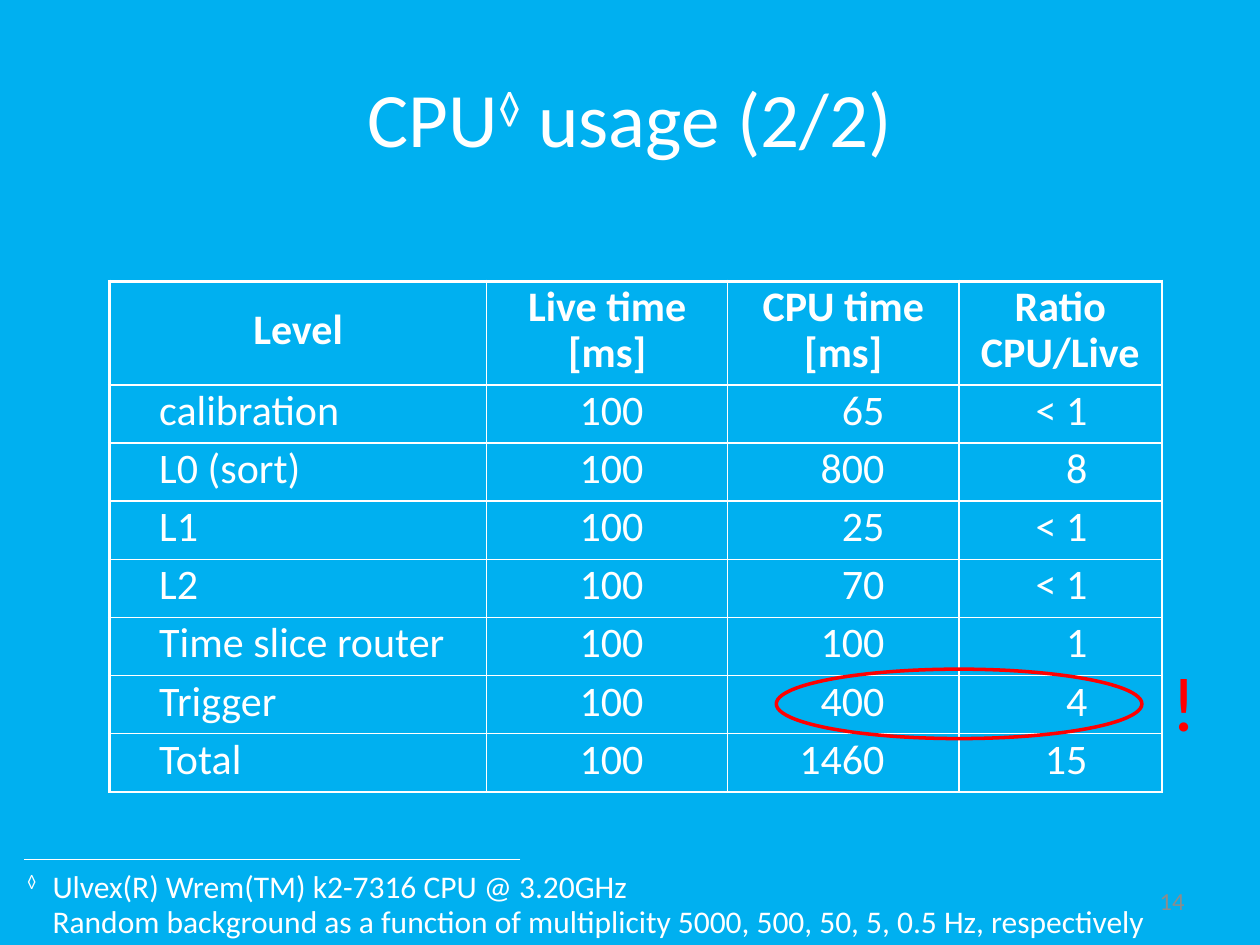
"""Build the CPU usage slide with its table, highlight and footnote."""
from dataclasses import dataclass

from lxml import etree
from pptx import Presentation
from pptx.dml.color import RGBColor
from pptx.enum.shapes import MSO_CONNECTOR, MSO_SHAPE
from pptx.enum.text import MSO_ANCHOR, PP_ALIGN
from pptx.oxml.ns import qn
from pptx.slide import Slide
from pptx.table import Table, _Cell
from pptx.text.text import TextFrame, _Paragraph
from pptx.util import Cm, Pt

LEFT, CENTER, RIGHT = PP_ALIGN.LEFT, PP_ALIGN.CENTER, PP_ALIGN.RIGHT
TOP, MIDDLE = MSO_ANCHOR.TOP, MSO_ANCHOR.MIDDLE
ELLIPSE, STRAIGHT = MSO_SHAPE.OVAL, MSO_CONNECTOR.STRAIGHT
COLORS = {"background": "00B0F0", "text": "FFFFFF", "alert": "FF0000", "number": "8C8C8C"}
FONT = "Calibri"
THIN, THICK = 1, 2.25
HEADER_HEIGHT, ROW_HEIGHT = 2.08, 1.17
FOOTNOTE_INDENT = 0.51


@dataclass(frozen=True)
class Box:
    """Hold a position and size in centimetres."""
    left: float
    top: float
    width: float
    height: float

    def lengths(self) -> tuple[Cm, Cm, Cm, Cm]:
        """Return the four values as lengths."""
        return Cm(self.left), Cm(self.top), Cm(self.width), Cm(self.height)


@dataclass(frozen=True)
class Style:
    """Describe the look of a run."""
    size: float
    color: str = "text"
    bold: bool = False


@dataclass(frozen=True)
class Column:
    """Describe a table column and its body cells."""
    heading: str
    width: float
    align: PP_ALIGN
    margin_left: float = 0.25
    margin_right: float = 0.25


COLUMNS = [
    Column("Level", 7.6, LEFT, margin_left=1.0),
    Column("Live time\n[ms]", 4.86, RIGHT, margin_right=1.7),
    Column("CPU time\n[ms]", 4.66, RIGHT, margin_right=1.5),
    Column("Ratio\nCPU/Live", 4.09, RIGHT, margin_right=1.5),
]
LEVELS = [
    ("calibration", "100", "65", "< 1"),
    ("L0 (sort)", "100", "800", "8"),
    ("L1", "100", "25", "< 1"),
    ("L2", "100", "70", "< 1"),
    ("Time slice router", "100", "100", "1"),
    ("Trigger", "100", "400", "4"),
    ("Total", "100", "1460", "15"),
]
TABLE = Box(2.21, 5.67, sum(column.width for column in COLUMNS),
            HEADER_HEIGHT + ROW_HEIGHT * len(LEVELS))


def rgb(name: str) -> RGBColor:
    """Look up a colour by name."""
    return RGBColor.from_string(COLORS[name])


def add_run(paragraph: _Paragraph, text: str, style: Style, raised: bool = False) -> None:
    """Append a styled run, optionally as superscript."""
    run = paragraph.add_run()
    run.text = text
    run.font.name = FONT
    run.font.size = Pt(style.size)
    run.font.bold = style.bold
    run.font.color.rgb = rgb(style.color)
    if raised:
        run._r.get_or_add_rPr().set("baseline", "30000")


def add_text_frame(slide: Slide, box: Box, anchor: MSO_ANCHOR = TOP) -> TextFrame:
    """Add a wrapping text box and return its frame."""
    frame = slide.shapes.add_textbox(*box.lengths()).text_frame
    frame.word_wrap = True
    frame.vertical_anchor = anchor
    return frame


def add_label(slide: Slide, box: Box, text: str, style: Style,
              align: PP_ALIGN, anchor: MSO_ANCHOR) -> None:
    """Add a text box with one run."""
    paragraph = add_text_frame(slide, box, anchor).paragraphs[0]
    paragraph.alignment = align
    add_run(paragraph, text, style)


def add_title(slide: Slide) -> None:
    """Add the title with its footnote mark."""
    paragraph = add_text_frame(slide, Box(1.27, 0.76, 22.86, 3.18), MIDDLE).paragraphs[0]
    paragraph.alignment = CENTER
    style = Style(44)
    add_run(paragraph, "CPU", style)
    add_run(paragraph, "◊", style, raised=True)
    add_run(paragraph, " usage (2/2)", style)


def add_footnote(slide: Slide) -> None:
    """Add the separating rule and the two footnote lines."""
    rule = slide.shapes.add_connector(STRAIGHT, Cm(10.49), Cm(17.32), Cm(0.48), Cm(17.32))
    rule.line.color.rgb = rgb("text")
    rule.line.width = Pt(0.75)
    etree.SubElement(rule._element.spPr, qn("a:effectLst"))
    frame = add_text_frame(slide, Box(0.3, 17.4, 23.6, 1.68))
    processor, background = frame.paragraphs[0], frame.add_paragraph()
    for paragraph, indent in ((processor, -FOOTNOTE_INDENT), (background, 0)):
        paragraph.line_spacing = Pt(20)
        properties = paragraph._p.get_or_add_pPr()
        properties.set("marL", str(Cm(FOOTNOTE_INDENT)))
        properties.set("indent", str(Cm(indent)))
    style = Style(18)
    add_run(processor, "◊\t", style, raised=True)
    add_run(processor, "Ulvex(R) Wrem(TM) k2-7316 CPU @ 3.20GHz", style)
    add_run(background, "Random background as a function of multiplicity "
            "5000, 500, 50, 5, 0.5 Hz, respectively", style)


def set_borders(cell: _Cell, left: float, top: float) -> None:
    """Draw all four borders of a cell."""
    properties = cell._tc.get_or_add_tcPr()
    widths = {"a:lnL": left, "a:lnR": THIN, "a:lnT": top, "a:lnB": THIN}
    for position, (tag, width) in enumerate(widths.items()):
        line = etree.Element(qn(tag), w=str(Pt(width)))
        fill = etree.SubElement(line, qn("a:solidFill"))
        etree.SubElement(fill, qn("a:srgbClr"), val=COLORS["text"])
        properties.insert(position, line)


def fill_cell(table: Table, row: int, col: int, text: str) -> None:
    """Write and format a header or body cell."""
    cell, column, header = table.cell(row, col), COLUMNS[col], row == 0
    cell.fill.background()
    set_borders(cell, THIN if col else THICK, THICK if header else THIN)
    if header:
        cell.vertical_anchor = TOP if col else MIDDLE
    else:
        cell.margin_left = Cm(column.margin_left)
        cell.margin_right = Cm(column.margin_right)
    frame = cell.text_frame
    for index, line in enumerate(text.split("\n")):
        paragraph = frame.add_paragraph() if index else frame.paragraphs[0]
        paragraph.alignment = CENTER if header else column.align
        paragraph.line_spacing = Pt(26)
        add_run(paragraph, line, Style(24, bold=header))


def add_usage_table(slide: Slide) -> None:
    """Add the table of times per level."""
    rows = [tuple(column.heading for column in COLUMNS), *LEVELS]
    table = slide.shapes.add_table(len(rows), len(COLUMNS), *TABLE.lengths()).table
    table.horz_banding = False
    for col, column in enumerate(COLUMNS):
        table.columns[col].width = Cm(column.width)
    for row, texts in enumerate(rows):
        table.rows[row].height = Cm(ROW_HEIGHT if row else HEADER_HEIGHT)
        for col, text in enumerate(texts):
            fill_cell(table, row, col, text)


def add_highlight(slide: Slide) -> None:
    """Circle the trigger values and add the exclamation mark."""
    ring = slide.shapes.add_shape(ELLIPSE, *Box(15.65, 13.49, 7.37, 1.4).lengths())
    ring.shadow.inherit = False
    ring.fill.background()
    ring.line.color.rgb = rgb("alert")
    ring.line.width = Pt(2)
    add_label(slide, Box(23.37, 13.08, 1.02, 2.13), "!", Style(44, "alert"), LEFT, TOP)


def main() -> None:
    """Build and save the presentation."""
    deck = Presentation()
    deck.slide_width, deck.slide_height = Cm(25.4), Cm(19.05)
    slide = deck.slides.add_slide(deck.slide_layouts[6])
    slide.background.fill.solid()
    slide.background.fill.fore_color.rgb = rgb("background")
    add_title(slide)
    add_label(slide, Box(18.21, 17.65, 5.92, 1.02), "14", Style(14, "number"), RIGHT, MIDDLE)
    add_footnote(slide)
    add_usage_table(slide)
    add_highlight(slide)
    deck.save("out.pptx")


if __name__ == "__main__":
    main()
